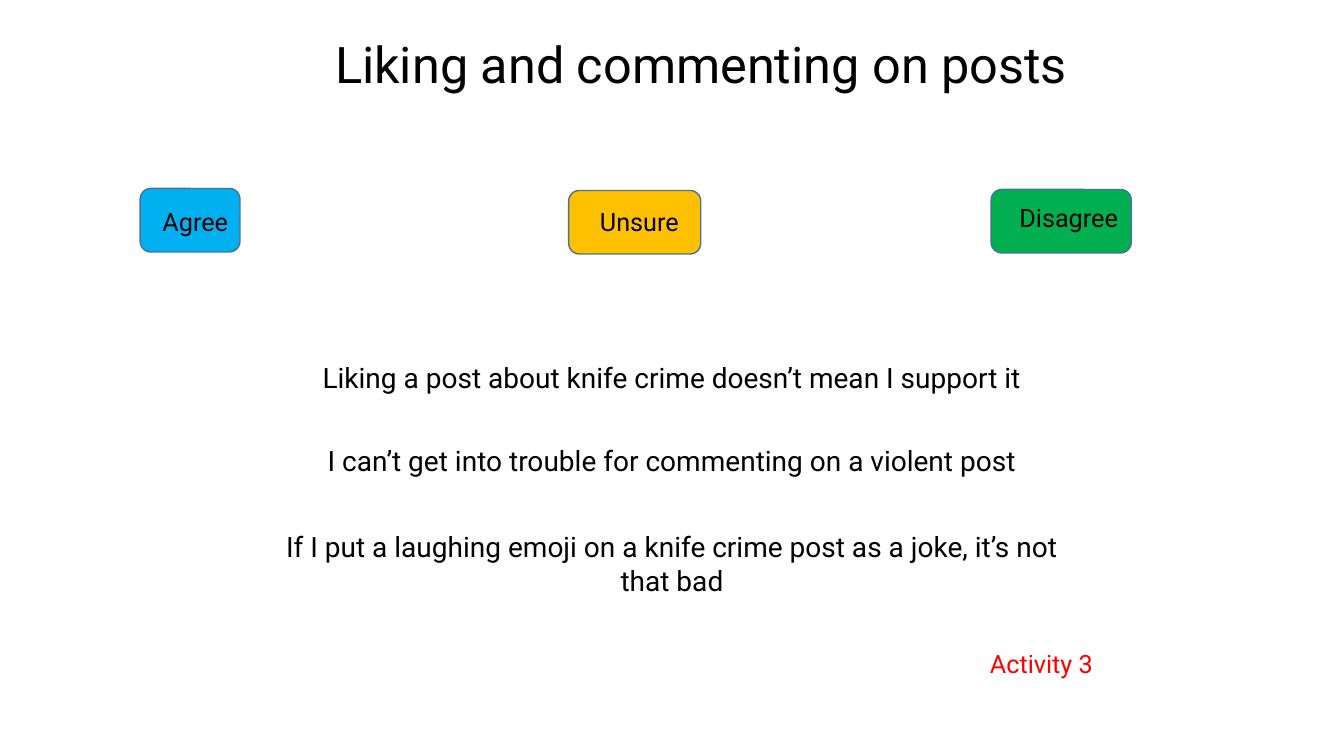
from pptx import Presentation
from pptx.dml.color import RGBColor
from pptx.enum import shapes, text
from pptx.oxml.ns import qn
from pptx.util import Inches, Pt

FONT = "Roboto"
BLACK = RGBColor(0x00, 0x00, 0x00)
RED = RGBColor(0xFF, 0x00, 0x00)
BLUE = RGBColor(0x00, 0xB0, 0xF0)
AMBER = RGBColor(0xFF, 0xC0, 0x00)
GREEN = RGBColor(0x00, 0xB0, 0x50)
OUTLINE = RGBColor(0x43, 0x73, 0x9E)

# wording, left, top, width, left inset, bottom inset, fill
ANSWERS = [
    ("Agree", 1.39, 1.87, 0.99, 0.19, 0.02, BLUE),
    ("Unsure", 5.64, 1.89, 1.31, 0.28, 0.06, AMBER),
    ("Disagree", 9.83, 1.88, 1.39, 0.25, 0.12, GREEN),
]
ANSWER_HEIGHT = 0.63

# wording, points of space before
STATEMENTS = [
    ("Liking a post about knife crime doesn’t mean I support it", 0),
    ("I can’t get into trouble for commenting on a violent post", 35),
    ("If I put a laughing emoji on a knife crime post as a joke, it’s not that bad", 37.5),
]


def place(shape, left, top, width, height):
    shape.left, shape.top = Inches(left), Inches(top)
    shape.width, shape.height = Inches(width), Inches(height)


def write(paragraph, wording, size, color=BLACK, align=text.PP_ALIGN.LEFT):
    paragraph.alignment = align
    run = paragraph.add_run()
    run.text = wording
    run.font.name = FONT
    run.font.size = Pt(size)
    run.font.color.rgb = color


def fill_title(title, wording):
    place(title, 1.69, 0.27, 10.53, 0.71)
    title.text_frame.auto_size = text.MSO_AUTO_SIZE.NONE
    write(title.text_frame.paragraphs[0], wording, 36, align=text.PP_ALIGN.CENTER)


def fill_statements(body):
    place(body, 2.51, 3.53, 8.31, 2.5)
    frame = body.text_frame
    frame.auto_size = text.MSO_AUTO_SIZE.NONE
    for index, (wording, gap) in enumerate(STATEMENTS):
        paragraph = frame.add_paragraph() if index else frame.paragraphs[0]
        properties = paragraph._p.get_or_add_pPr()
        properties.set("marL", "0")
        properties.set("indent", "0")
        properties.append(properties.makeelement(qn("a:buNone"), {}))
        paragraph.space_before = Pt(gap)
        write(paragraph, wording, 20, align=text.PP_ALIGN.CENTER)


def add_answer(slide, wording, left, top, width, inset, bottom, fill):
    answer = slide.shapes.add_shape(
        shapes.MSO_SHAPE.ROUNDED_RECTANGLE,
        Inches(left), Inches(top), Inches(width), Inches(ANSWER_HEIGHT))
    answer.shadow.inherit = False
    answer.fill.solid()
    answer.fill.fore_color.rgb = fill
    answer.line.color.rgb = OUTLINE
    answer.line.width = Pt(1)
    frame = answer.text_frame
    frame.word_wrap = True
    frame.vertical_anchor = text.MSO_ANCHOR.MIDDLE
    frame.margin_left, frame.margin_right = Inches(inset), 0
    frame.margin_top, frame.margin_bottom = Inches(0.05), Inches(bottom)
    write(frame.paragraphs[0], wording, 18)


def add_activity_label(slide, wording):
    label = slide.shapes.add_textbox(
        Inches(9.72), Inches(6.38), Inches(3.04), Inches(0.4))
    label.text_frame.word_wrap = True
    write(label.text_frame.paragraphs[0], wording, 18, RED)


def main():
    deck = Presentation()
    deck.slide_width, deck.slide_height = Inches(13.33), Inches(7.5)
    slide = deck.slides.add_slide(deck.slide_layouts.get_by_name("Title and Content"))
    fill_title(slide.shapes.title, "Liking and commenting on posts")
    fill_statements(slide.placeholders[1])
    for answer in ANSWERS:
        add_answer(slide, *answer)
    add_activity_label(slide, "Activity 3")
    deck.save("out.pptx")


if __name__ == "__main__":
    main()
